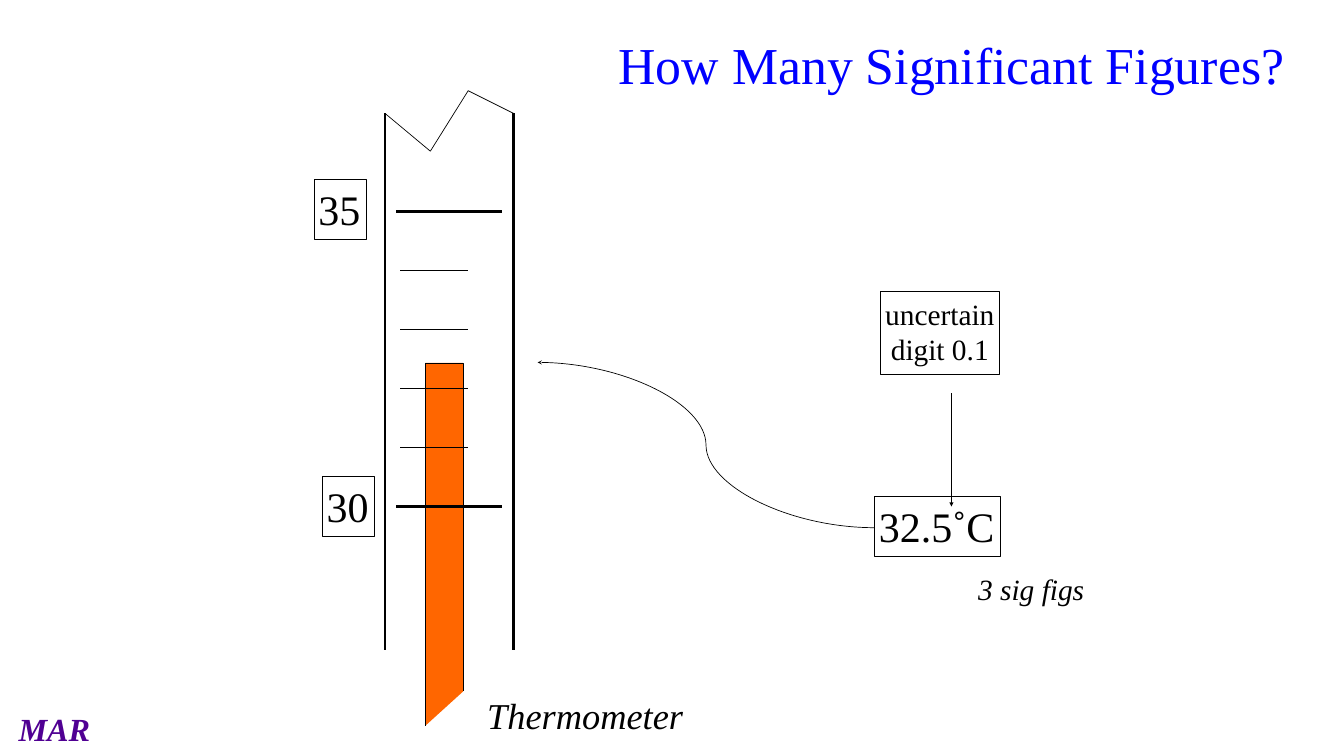
from dataclasses import dataclass

from lxml.etree import SubElement
from pptx import Presentation
from pptx.dml.color import RGBColor
from pptx.enum.shapes import MSO_CONNECTOR, MSO_SHAPE
from pptx.enum.text import MSO_ANCHOR, PP_ALIGN
from pptx.oxml.ns import qn
from pptx.util import Inches, Pt


@dataclass(frozen=True)
class Theme:
    font: str = "Times New Roman"
    ink: RGBColor = RGBColor(0, 0, 0)
    paper: RGBColor = RGBColor(255, 255, 255)
    heading: RGBColor = RGBColor(0, 0, 255)
    signature: RGBColor = RGBColor(0x50, 0, 0x93)
    mercury: RGBColor = RGBColor(0xFF, 0x66, 0)
    title_size: int = 74
    value_size: int = 60
    caption_size: int = 52
    signature_size: int = 46
    note_size: int = 42
    thin: int = 1
    thick: int = 4


THEME = Theme()


@dataclass(frozen=True)
class Box:
    left: float
    top: float
    width: float
    height: float

    def inner(self, x, y, width, height):
        return Box(self.left + x, self.top + y, width, height)

    def point(self, x, y):
        return Inches(self.left + x), Inches(self.top + y)

    def bounds(self):
        return [Inches(v) for v in (self.left, self.top, self.width, self.height)]


def write(frame, text, size, color=THEME.ink, align=PP_ALIGN.LEFT,
          bold=False, italic=False, inset=0.1, wrap=False):
    frame.text = text
    frame.word_wrap = wrap
    frame.margin_left = frame.margin_right = Inches(inset)
    frame.margin_top = frame.margin_bottom = Inches(inset)
    for paragraph in frame.paragraphs:
        paragraph.alignment = align
        for run in paragraph.runs:
            run.font.name = THEME.font
            run.font.size = Pt(size)
            run.font.color.rgb = color
            run.font.bold = bold
            run.font.italic = italic


def outline(shape, weight=THEME.thin):
    shape.line.color.rgb = THEME.ink
    shape.line.width = Pt(weight)


def add_caption(slide, box, text, size, **style):
    caption = slide.shapes.add_textbox(*box.bounds())
    write(caption.text_frame, text, size, **style)


def add_label(slide, box, text, size, align=PP_ALIGN.LEFT):
    label = slide.shapes.add_shape(MSO_SHAPE.RECTANGLE, *box.bounds())
    label.shadow.inherit = False
    label.fill.background()
    outline(label)
    label.text_frame.vertical_anchor = MSO_ANCHOR.TOP
    write(label.text_frame, text, size, align=align, inset=0.09)


def add_line(slide, start, end, weight=THEME.thin, kind=MSO_CONNECTOR.STRAIGHT,
             head=None, tail=None):
    line = slide.shapes.add_connector(kind, *start, *end)
    outline(line, weight)
    for tag, arrow in (("a:headEnd", head), ("a:tailEnd", tail)):
        if arrow:
            SubElement(line.line._get_or_add_ln(), qn(tag), type=arrow)
    SubElement(line._element.spPr, qn("a:effectLst"))


def add_outline(slide, points, fill=None):
    builder = slide.shapes.build_freeform(*points[0], scale=1.0)
    builder.add_line_segments(points[1:], close=False)
    shape = builder.convert_to_shape()
    shape.shadow.inherit = False
    outline(shape)
    if fill is None:
        shape.fill.background()
    else:
        shape.fill.solid()
        shape.fill.fore_color.rgb = fill


def add_title(slide, box):
    title = slide.shapes.title
    title.left, title.top, title.width, title.height = box.bounds()
    title.fill.solid()
    title.fill.fore_color.rgb = THEME.paper
    title.text_frame.vertical_anchor = MSO_ANCHOR.MIDDLE
    write(title.text_frame, "How Many Significant Figures?", THEME.title_size,
          THEME.heading, PP_ALIGN.CENTER, wrap=True)


def add_thermometer(slide, box):
    for wall in (0, box.width):
        add_line(slide, box.point(wall, 0.45), box.point(wall, box.height), THEME.thick)
    broken_top = [(0, 0.45), (0.9, 1.2), (1.65, 0), (box.width, 0.45)]
    add_outline(slide, [box.point(*corner) for corner in broken_top])
    column = [(0.8, 12.6), (0.8, 5.4), (1.55, 5.4), (1.55, 11.92)]
    add_outline(slide, [box.point(*corner) for corner in column], THEME.mercury)

    highest, lowest, first_tick, gap = 35, 30, 2.4, 1.17
    for degree in range(lowest, highest + 1):
        y = first_tick + (highest - degree) * gap
        major = degree in (lowest, highest)
        start, end = (0.22, 2.32) if major else (0.3, 1.65)
        add_line(slide, box.point(start, y), box.point(end, y),
                 THEME.thick if major else THEME.thin)

    for degree, x, y in ((highest, -1.41, 1.75), (lowest, -1.25, 7.65)):
        add_label(slide, box.inner(x, y, 1.04, 1.19), str(degree), THEME.value_size)
    add_caption(slide, box.inner(1.93, 11.85, 4.11, 0.99), "Thermometer",
                THEME.caption_size, italic=True)


def add_reading(slide, box):
    add_line(slide, box.point(0, 1.41), box.point(6.68, 4.69),
             kind=MSO_CONNECTOR.CURVE, head="stealth")
    add_label(slide, box.inner(6.68, 4.06, 2.5, 1.19), "32.5˚C", THEME.value_size)
    add_line(slide, box.point(8.21, 2.02), box.point(8.21, 4.27), tail="triangle")
    add_label(slide, box.inner(6.79, 0, 2.38, 1.64), "uncertain\ndigit 0.1",
              THEME.note_size, PP_ALIGN.CENTER)
    add_caption(slide, box.inner(8.67, 5.49, 2.27, 0.87), "3 sig figs",
                THEME.note_size, italic=True, inset=0.07)


def add_signature(slide, box):
    add_caption(slide, box, "MAR", THEME.signature_size, color=THEME.signature,
                bold=True, italic=True)


def main():
    presentation = Presentation()
    presentation.slide_width = Inches(26.67)
    presentation.slide_height = Inches(15)
    slide = presentation.slides.add_slide(presentation.slide_layouts[5])
    slide.background.fill.solid()
    slide.background.fill.fore_color.rgb = THEME.paper
    add_signature(slide, Box(0.27, 13.97, 1.63, 0.97))
    add_title(slide, Box(11.58, 0.08, 14.61, 2.39))
    add_thermometer(slide, Box(7.64, 1.8, 2.55, 11.1))
    add_reading(slide, Box(10.67, 5.78, 10.94, 6.36))
    presentation.save("out.pptx")


if __name__ == "__main__":
    main()
